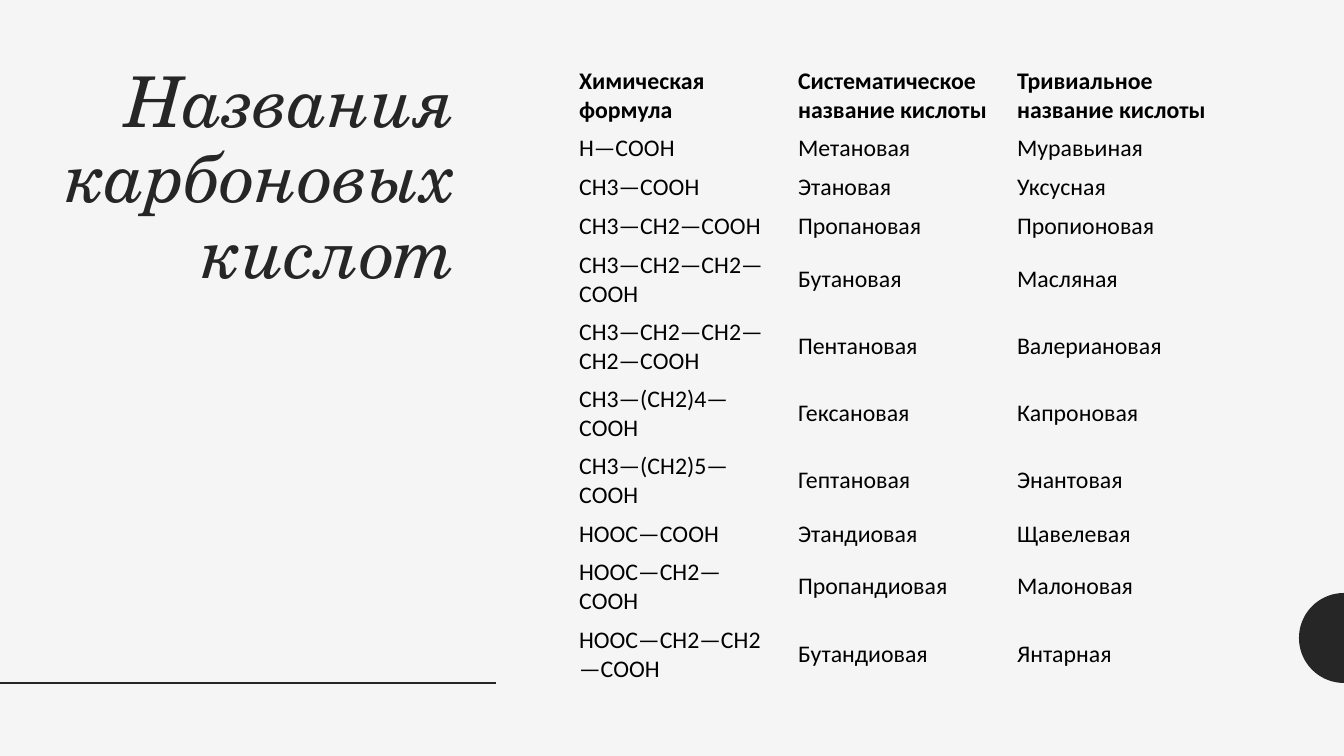
import math

import pptx
import pptx.dml.color
import pptx.enum.shapes
import pptx.enum.text
import pptx.oxml
import pptx.util

PAPER = pptx.dml.color.RGBColor(0xF5, 0xF5, 0xF5)
CHARCOAL = pptx.dml.color.RGBColor(0x26, 0x26, 0x26)
BLACK = pptx.dml.color.RGBColor(0, 0, 0)

EMU_PER_PX = 12192000 / 1344
NO_STYLE_NO_GRID = "{2D5ABB26-0587-4C30-8999-92F81FD0307C}"

ACIDS = [
    ("Химическая формула", "Систематическое название кислоты", "Тривиальное название кислоты"),
    ("Н—СООН", "Метановая", "Муравьиная"),
    ("СН3—СООН", "Этановая", "Уксусная"),
    ("СН3—СН2—СООН", "Пропановая", "Пропионовая"),
    ("СН3—СН2—СН2—СООН", "Бутановая", "Масляная"),
    ("СН3—СН2—СН2—СН2—СООН", "Пентановая", "Валериановая"),
    ("СН3—(СН2)4—СООН", "Гексановая", "Капроновая"),
    ("СН3—(СН2)5—СООН", "Гептановая", "Энантовая"),
    ("НООС—СООН", "Этандиовая", "Щавелевая"),
    ("НООС—СН2—СООН", "Пропандиовая", "Малоновая"),
    ("НООС—СН2—СН2—СООН", "Бутандиовая", "Янтарная"),
]
HEADER, ONE_LINE, TWO_LINES = 65, 38, 67
ROW_HEIGHTS = [HEADER] + [ONE_LINE] * 3 + [TWO_LINES] * 4 + [ONE_LINE] + [TWO_LINES] * 2


def px(length):
    return pptx.util.Emu(round(length * EMU_PER_PX))


class SlideBuilder:
    title_font = "TeX Gyre Schola"
    body_font = "Calibri"

    def __init__(self, presentation):
        self.slide = presentation.slides.add_slide(presentation.slide_layouts[6])
        self.slide.background.fill.solid()
        self.slide.background.fill.fore_color.rgb = PAPER

    def half_disc(self, center_x, center_y, radius):
        """Draw the left half of a disc, flat side on center_x."""
        angles = [math.radians(degrees) for degrees in range(90, 271, 5)]
        points = [
            (center_x + radius * math.cos(angle), center_y + radius * math.sin(angle))
            for angle in angles
        ]
        builder = self.slide.shapes.build_freeform(
            px(points[0][0]), px(points[0][1]), scale=1.0
        )
        builder.add_line_segments([(px(x), px(y)) for x, y in points[1:]], close=True)
        shape = builder.convert_to_shape()
        shape.shadow.inherit = False
        shape.fill.solid()
        shape.fill.fore_color.rgb = CHARCOAL
        shape.line.fill.background()

    def rule(self, left, right, y):
        connector = self.slide.shapes.add_connector(
            pptx.enum.shapes.MSO_CONNECTOR.STRAIGHT, px(left), px(y), px(right), px(y)
        )
        connector.line.color.rgb = CHARCOAL
        connector.line.width = pptx.util.Pt(2)
        properties = connector.element.spPr
        properties.append(properties.makeelement(pptx.oxml.ns.qn("a:effectLst"), {}))

    def title(self, left, top, width, height, text):
        box = self.slide.shapes.add_textbox(px(left), px(top), px(width), px(height))
        box.text_frame.word_wrap = True
        paragraph = box.text_frame.paragraphs[0]
        paragraph.text = text
        paragraph.alignment = pptx.enum.text.PP_ALIGN.RIGHT
        paragraph.line_spacing = 0.9
        self.style(paragraph, self.title_font, 50, CHARCOAL)
        paragraph.font.italic = True

    def table(self, left, top, column_width, row_heights, rows):
        column_count = len(rows[0])
        frame = self.slide.shapes.add_table(
            len(rows), column_count, px(left), px(top),
            px(column_width * column_count), px(sum(row_heights)),
        )
        frame.element.xpath(".//a:tableStyleId")[0].text = NO_STYLE_NO_GRID
        table = frame.table
        table.first_row = False
        table.horz_banding = False
        for column in table.columns:
            column.width = px(column_width)
        for row_index, (row, height, texts) in enumerate(zip(table.rows, row_heights, rows)):
            row.height = px(height)
            for cell, text in zip(row.cells, texts):
                cell.fill.background()
                cell.vertical_anchor = pptx.enum.text.MSO_ANCHOR.MIDDLE
                paragraph = cell.text_frame.paragraphs[0]
                paragraph.text = text
                self.style(paragraph, self.body_font, 17, BLACK)
                paragraph.font.bold = row_index == 0

    def style(self, paragraph, font_name, size, color):
        paragraph.font.name = font_name
        paragraph.font.size = pptx.util.Pt(size)
        paragraph.font.color.rgb = color


def main():
    presentation = pptx.Presentation()
    presentation.slide_width = px(1344)
    presentation.slide_height = px(756)
    builder = SlideBuilder(presentation)
    builder.half_disc(1344, 638, 45)
    builder.rule(0, 496, 683)
    builder.title(44, 62, 422, 546, "Названия карбоновых кислот")
    builder.table(569, 62, 219, ROW_HEIGHTS, ACIDS)
    presentation.save("out.pptx")


if __name__ == "__main__":
    main()
